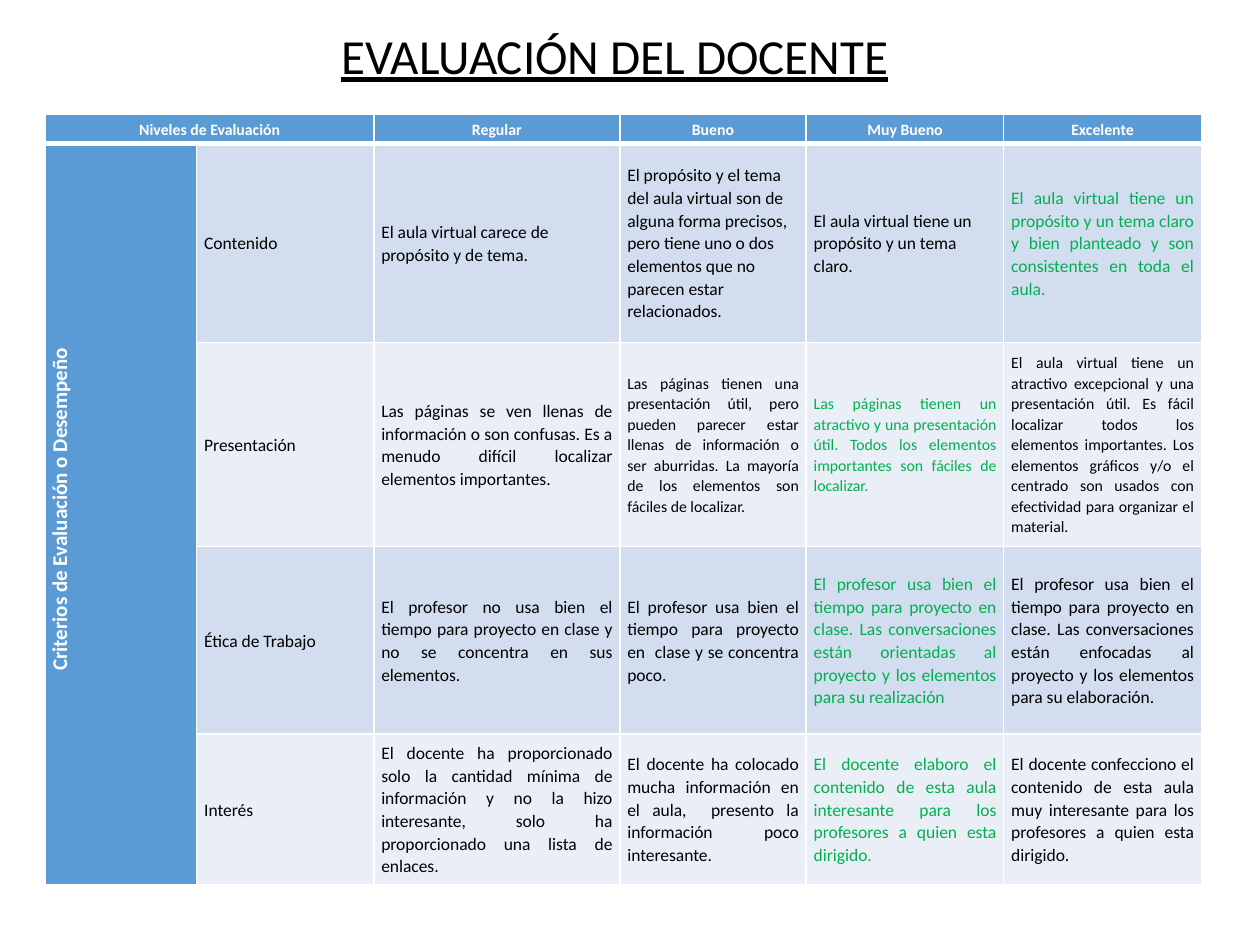
import pptx
import pptx.dml.color
import pptx.enum.text
import pptx.util
from lxml import etree
from pptx.oxml.ns import qn

Pt = pptx.util.Pt
RGBColor = pptx.dml.color.RGBColor
ALIGN = pptx.enum.text.PP_ALIGN
MIDDLE = pptx.enum.text.MSO_ANCHOR.MIDDLE

BLUE = RGBColor(0x5B, 0x9B, 0xD5)
BAND_DARK = RGBColor(0xD2, 0xDE, 0xEF)
BAND_LIGHT = RGBColor(0xEA, 0xEF, 0xF7)
GREEN = RGBColor(0x00, 0xB0, 0x50)
BLACK = RGBColor(0, 0, 0)
WHITE = RGBColor(0xFF, 0xFF, 0xFF)


def write(tf, text, size=10, color=BLACK, bold=False, underline=False,
          align=ALIGN.LEFT, spacing=1.07):
    """Put one formatted paragraph into a text frame."""
    p = tf.paragraphs[0]
    p.alignment = align
    p.line_spacing = spacing
    r = p.add_run()
    r.text = text
    r.font.name = "Calibri"
    r.font.size = Pt(size)
    r.font.bold = bold
    r.font.underline = underline
    r.font.color.rgb = color


def style_cell(cell, fill, top=1, bottom=1):
    """Set white borders, fill, margins and anchor of a cell."""
    tcPr = cell._tc.get_or_add_tcPr()
    for side, width in (("L", 1), ("R", 1), ("T", top), ("B", bottom)):
        ln = etree.SubElement(tcPr, qn("a:ln" + side), w=str(Pt(width)))
        line_fill = etree.SubElement(ln, qn("a:solidFill"))
        etree.SubElement(line_fill, qn("a:srgbClr"), val=str(WHITE))
    cell.fill.solid()
    cell.fill.fore_color.rgb = fill
    cell.margin_left = cell.margin_right = Pt(4.3)
    cell.margin_top = cell.margin_bottom = 0
    cell.vertical_anchor = MIDDLE


# Slide
prs = pptx.Presentation()
prs.slide_width, prs.slide_height = Pt(720), Pt(540)
s = prs.slides.add_slide(prs.slide_layouts[5])

# Title
title = s.shapes.title
title.left, title.top, title.width, title.height = Pt(16.5), Pt(17), Pt(669.5), Pt(35)
tf = title.text_frame
tf.word_wrap = True
tf.auto_size = pptx.enum.text.MSO_AUTO_SIZE.NONE
tf.vertical_anchor = MIDDLE
write(tf, "EVALUACIÓN DEL DOCENTE", size=28, underline=True,
      align=ALIGN.CENTER, spacing=0.8)

# Rubric content: criterion, then one text per level
levels = ["Regular", "Bueno", "Muy Bueno", "Excelente"]
criteria = [
    ["Contenido",
     "El aula virtual carece de propósito y de tema.",
     "El propósito y el tema del aula virtual son de alguna forma precisos, pero tiene uno o dos elementos que no parecen estar relacionados.",
     "El aula virtual tiene un propósito y un tema claro.",
     "El aula virtual tiene un propósito y un tema claro y bien planteado y son consistentes en toda el aula."],
    ["Presentación",
     "Las páginas se ven llenas de información o son confusas. Es a menudo difícil localizar elementos importantes.",
     "Las páginas tienen una presentación útil, pero pueden parecer estar llenas de información o ser aburridas. La mayoría de los elementos son fáciles de localizar.",
     "Las páginas tienen un atractivo y una presentación útil. Todos los elementos importantes son fáciles de localizar.",
     "El aula virtual tiene un atractivo excepcional y una presentación útil. Es fácil localizar todos los elementos importantes. Los elementos gráficos y/o el centrado son usados con efectividad para organizar el material."],
    ["Ética de Trabajo",
     "El profesor no usa bien el tiempo para proyecto en clase y no se concentra en sus elementos.",
     "El profesor usa bien el tiempo para proyecto en  clase y se concentra poco.",
     "El profesor usa bien el tiempo para proyecto en clase. Las conversaciones están orientadas al proyecto y los elementos para su realización",
     "El profesor usa bien el tiempo para proyecto en clase. Las conversaciones están enfocadas al proyecto y los elementos para su elaboración."],
    ["Interés",
     "El docente ha proporcionado solo la cantidad mínima de información y no la hizo interesante, solo ha proporcionado una lista de enlaces.",
     "El docente ha colocado mucha información en el aula,  presento la información poco interesante.",
     "El docente elaboro el contenido de esta aula interesante para los profesores a quien esta dirigido.",
     "El docente confecciono el contenido de esta aula muy interesante para los profesores a quien esta dirigido."],
]
chosen_levels = [4, 3, 3, 3]

# Table grid
col_widths = [86.4, 101.2, 140.6, 106.5, 112.9, 112.9]
row_heights = [16.6, 113.7, 116.6, 107.2, 86.2]
table = s.shapes.add_table(len(row_heights), len(col_widths), Pt(26), Pt(65.5),
                           Pt(sum(col_widths)), Pt(sum(row_heights))).table
for col, width in zip(table.columns, col_widths):
    col.width = Pt(width)
for row, height in zip(table.rows, row_heights):
    row.height = Pt(height)

# Fills and borders: blue header row and first column, banded body
for i in range(len(row_heights)):
    for j in range(len(col_widths)):
        band = BAND_DARK if i % 2 else BAND_LIGHT
        style_cell(table.cell(i, j), BLUE if i == 0 or j == 0 else band,
                   top=3 if i == 1 else 1, bottom=3 if i == 0 else 1)

# Header row
table.cell(0, 0).merge(table.cell(0, 1))
write(table.cell(0, 0).text_frame, "Niveles de Evaluación", size=9,
      color=WHITE, bold=True, align=ALIGN.CENTER)
for j, level in enumerate(levels, start=2):
    write(table.cell(0, j).text_frame, level, size=9, color=WHITE, bold=True,
          align=ALIGN.CENTER)

# Vertical heading of the criteria
side = table.cell(1, 0)
side.merge(table.cell(4, 0))
side._tc.get_or_add_tcPr().set("vert", "vert270")
write(side.text_frame, "Criterios de Evaluación o Desempeño", size=12,
      color=WHITE, bold=True, align=ALIGN.CENTER)
side.text_frame.paragraphs[0]._p.get_or_add_pPr().set("marL", str(Pt(5.65)))

# Criteria: the level reached is green
for i, (texts, chosen) in enumerate(zip(criteria, chosen_levels), start=1):
    for j, text in enumerate(texts):
        left = j == 0 or (i == 1 and j < 4)
        write(table.cell(i, j + 1).text_frame, text,
              size=9 if i == 2 and j > 1 else 10,
              color=GREEN if j == chosen else BLACK,
              align=ALIGN.LEFT if left else ALIGN.JUSTIFY)

prs.save("out.pptx")
